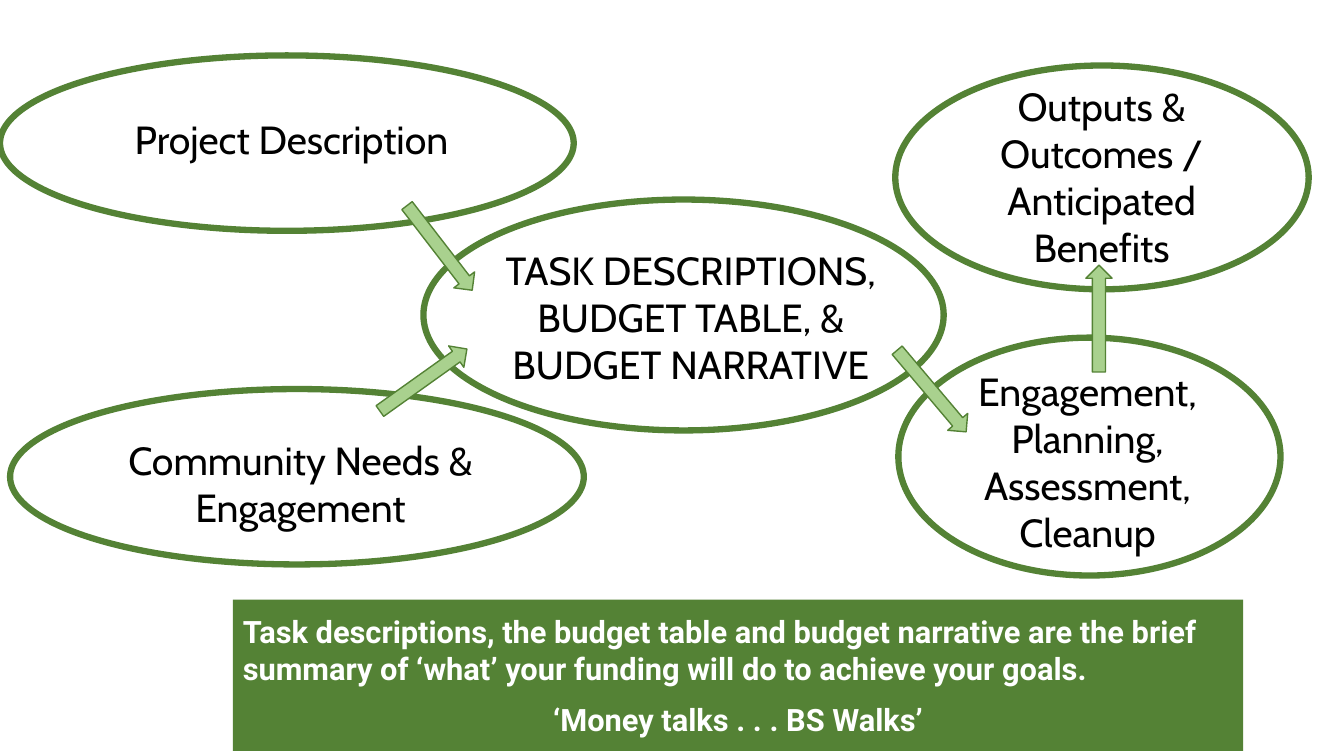
import pptx
import pptx.util
import pptx.dml.color
import pptx.enum.shapes
import pptx.enum.text

Inches, Pt = pptx.util.Inches, pptx.util.Pt
SHAPE = pptx.enum.shapes.MSO_SHAPE
ALIGN = pptx.enum.text.PP_ALIGN
ANCHOR = pptx.enum.text.MSO_ANCHOR

COLORS = {"green": "548235", "light": "A9D18E", "black": "000000", "white": "FFFFFF"}

# label, label box, oval box
TOPICS = [
    ("TASK DESCRIPTIONS, BUDGET TABLE, & BUDGET NARRATIVE",
     (4.82, 2.39, 4.06, 1.51), (4.2, 1.98, 5.16, 2.29)),
    ("Outputs & Outcomes / Anticipated Benefits",
     (9.18, 0.77, 3.49, 1.99), (8.88, 0.65, 4.1, 2.22)),
    ("Engagement, Planning, Assessment, Cleanup",
     (9.24, 3.59, 3.09, 1.99), (8.91, 3.35, 3.79, 2.36)),
    ("Project Description",
     (0.52, 1.09, 4.74, 0.57), (0, 0.55, 5.69, 1.74)),
    ("Community Needs & Engagement",
     (0.61, 4.28, 4.74, 1.04), (0.1, 3.86, 5.69, 1.74)),
]

# left, top, turn in degrees
ARROWS = [(10.37, 3.03, 270), (3.67, 3.64, 324.5), (3.83, 2.33, 52.4), (8.71, 3.75, 49.8)]

BANNER = [
    ("Task descriptions, the budget table and budget narrative are the brief "
     "summary of ‘what’ your funding will do to achieve your goals.", ALIGN.LEFT, 0),
    ("‘Money talks . . . BS Walks’", ALIGN.CENTER, 4.4),
]


def color(name):
    return pptx.dml.color.RGBColor.from_string(COLORS[name])


def style(font, face, size, tint, bold=False):
    font.name, font.size, font.bold = face, Pt(size), bold
    font.color.rgb = color(tint)


def add_shape(slide, kind, box, fill=None, line=0):
    """Add a flat shape; line is the green outline's width in points."""
    shape = slide.shapes.add_shape(kind, *map(Inches, box))
    shape.shadow.inherit = False
    if fill:
        shape.fill.solid()
        shape.fill.fore_color.rgb = color(fill)
    else:
        shape.fill.background()
    if line:
        shape.line.color.rgb = color("green")
        shape.line.width = Pt(line)
    else:
        shape.line.fill.background()
    return shape


def add_label(slide, text, box):
    frame = slide.shapes.add_textbox(*map(Inches, box)).text_frame
    frame.word_wrap = True
    para = frame.paragraphs[0]
    para.text = text
    para.alignment = ALIGN.CENTER
    style(para.font, "Cabin", 28, "black")


def add_arrow(slide, left, top, turn):
    arrow = add_shape(slide, SHAPE.RIGHT_ARROW, (left, top, 1.06, 0.26), "light", 1)
    arrow.rotation = turn


def add_banner(slide):
    frame = add_shape(slide, SHAPE.RECTANGLE, (2.31, 5.95, 10.02, 1.5), "green").text_frame
    frame.word_wrap = True
    frame.vertical_anchor = ANCHOR.MIDDLE
    for index, (text, align, before) in enumerate(BANNER):
        para = frame.add_paragraph() if index else frame.paragraphs[0]
        para.text = text
        para.alignment = align
        para.space_before, para.space_after = Pt(before), Pt(6)
        style(para.font, "Roboto", 22, "white", True)


def main():
    deck = pptx.Presentation()
    deck.slide_width, deck.slide_height = Inches(13.33), Inches(7.5)
    slide = deck.slides.add_slide(deck.slide_layouts[6])
    for text, label, oval in TOPICS:
        add_label(slide, text, label)
        add_shape(slide, SHAPE.OVAL, oval, line=4.5)
    add_banner(slide)
    for arrow in ARROWS:
        add_arrow(slide, *arrow)
    deck.save("out.pptx")


if __name__ == "__main__":
    main()
